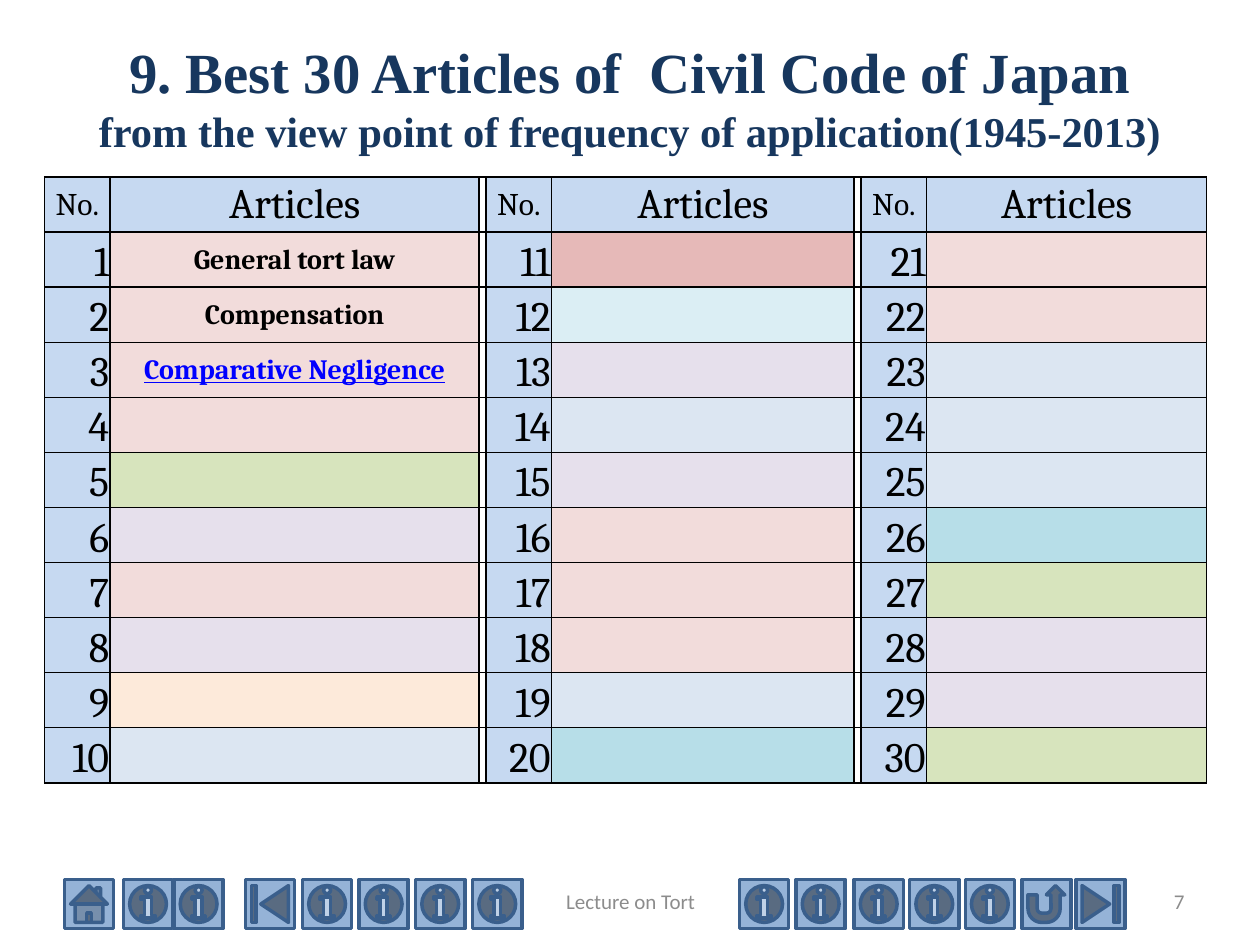
from lxml.etree import SubElement
from pptx import Presentation
from pptx.dml.color import RGBColor
from pptx.enum.shapes import MSO_SHAPE as SHAPE
from pptx.enum.text import MSO_ANCHOR as ANCHOR, MSO_AUTO_SIZE as AUTO, PP_ALIGN as ALIGN
from pptx.oxml.ns import qn
from pptx.util import Cm, Pt

HEADER = "C6D9F1"
PINK, ROSE, GREEN, LILAC = "F2DCDB", "E6B9B8", "D7E4BD", "E6E0EC"
BLUE, TEAL, PALE, PEACH = "DCE6F2", "B7DEE8", "DBEEF4", "FDEADA"

# Fill of each article cell, ten ranks per block
RANK_FILLS = [
    [PINK, PINK, PINK, PINK, GREEN, LILAC, PINK, LILAC, PEACH, BLUE],
    [ROSE, PALE, LILAC, BLUE, LILAC, PINK, PINK, PINK, BLUE, TEAL],
    [PINK, PINK, BLUE, BLUE, BLUE, TEAL, GREEN, LILAC, LILAC, GREEN],
]
ARTICLES = {1: "General tort law", 2: "Compensation", 3: "Comparative Negligence"}
COL_WIDTHS = [1.32, 7.44, 0.14, 1.32, 6.1, 0.14, 1.32, 5.64]
ROW_HEIGHT = 1.11

# Navigation buttons: kind and left edge in cm
INFO = SHAPE.ACTION_BUTTON_INFORMATION
BUTTONS = [
    (SHAPE.ACTION_BUTTON_HOME, 1.3), (INFO, 2.49), (INFO, 3.51),
    (SHAPE.ACTION_BUTTON_BEGINNING, 4.95),
    (INFO, 6.1), (INFO, 7.24), (INFO, 8.38), (INFO, 9.53),
    (INFO, 14.91), (INFO, 16.05), (INFO, 17.22), (INFO, 18.34), (INFO, 19.46),
    (SHAPE.ACTION_BUTTON_RETURN, 20.6), (SHAPE.ACTION_BUTTON_END, 21.69),
]


def rgb(value):
    return RGBColor.from_string(value)


def set_attrs(obj, values):
    for name, value in values.items():
        setattr(obj, name, value)


def add_run(p, text, size, font, color="000000", **extra):
    r = p.add_run()
    r.text = text
    set_attrs(r.font, {"size": Pt(size), "name": font, **extra})
    r.font.color.rgb = rgb(color)


def add_title(s):
    title = s.shapes.title
    set_attrs(title, {"left": Cm(1.27), "top": Cm(0.76), "width": Cm(22.86), "height": Cm(2.36)})
    tf = title.text_frame
    set_attrs(tf, {"auto_size": AUTO.NONE, "word_wrap": True, "vertical_anchor": ANCHOR.MIDDLE,
                   "margin_top": 0, "margin_bottom": 0})
    p = tf.paragraphs[0]
    p.alignment = ALIGN.CENTER
    style = {"font": "Times New Roman", "color": "17375E", "bold": True}
    add_run(p, "9. Best 30 Articles of  Civil Code of Japan", 32.4, **style)
    p.add_line_break()
    add_run(p, "from the view point of frequency of application(1945-2013)", 24.3, **style)


def add_button(s, kind, left):
    sp = s.shapes.add_shape(kind, Cm(left), Cm(17.73), Cm(0.99), Cm(0.99))
    sp.shadow.inherit = False
    sp.fill.solid()
    sp.fill.fore_color.rgb = rgb("95B3D7")
    sp.line.color.rgb = rgb("3A5F8C")
    sp.line.width = Pt(2)


def add_footer(s, text, left, width, align):
    tf = s.shapes.add_textbox(Cm(left), Cm(17.65), Cm(width), Cm(1.02)).text_frame
    set_attrs(tf, {"word_wrap": True, "vertical_anchor": ANCHOR.MIDDLE})
    p = tf.paragraphs[0]
    p.alignment = align
    add_run(p, text, 12, "Calibri", "8C8C8C")


def set_borders(cell):
    tc_pr = cell._tc.get_or_add_tcPr()
    for i, side in enumerate(("lnL", "lnR", "lnT", "lnB")):
        ln = SubElement(tc_pr, qn(f"a:{side}"), w=str(Pt(1)))
        SubElement(SubElement(ln, qn("a:solidFill")), qn("a:srgbClr"), val="000000")
        tc_pr.insert(i, ln)


def format_cell(cell, fill=None, text="", size=24, align=ALIGN.CENTER,
                anchor=ANCHOR.MIDDLE, **font):
    set_attrs(cell, {"margin_left": Cm(0.02), "margin_right": Cm(0.02), "margin_top": Cm(0.02),
                     "margin_bottom": 0, "vertical_anchor": anchor})
    if fill:
        cell.fill.solid()
        cell.fill.fore_color.rgb = rgb(fill)
    else:
        cell.fill.background()
    p = cell.text_frame.paragraphs[0]
    p.alignment = align
    if text:
        add_run(p, text, size, "Cambria", **font)
    set_borders(cell)


def add_article_table(s):
    rows = len(RANK_FILLS[0]) + 1
    frame = s.shapes.add_table(rows, len(COL_WIDTHS), Cm(0.9), Cm(3.57),
                               Cm(sum(COL_WIDTHS)), Cm(rows * ROW_HEIGHT))
    table = frame.table
    set_attrs(table, {"first_row": False, "horz_banding": False})
    for col, width in zip(table.columns, COL_WIDTHS):
        col.width = Cm(width)
    for row in table.rows:
        row.height = Cm(ROW_HEIGHT)

    for block, fills in enumerate(RANK_FILLS):
        col = 3 * block
        format_cell(table.cell(0, col), HEADER, "No.", 18)
        format_cell(table.cell(0, col + 1), HEADER, "Articles")
        for row, fill in enumerate(fills, 1):
            rank = 10 * block + row
            format_cell(table.cell(row, col), HEADER, str(rank),
                        align=ALIGN.RIGHT, anchor=ANCHOR.BOTTOM)
            link_look = {"color": "0000FF", "underline": True} if rank == 3 else {}
            format_cell(table.cell(row, col + 1), fill, ARTICLES.get(rank, ""), 16,
                        bold=True, **link_look)

    # Narrow gaps between the blocks
    for col in (2, 5):
        for row in range(rows):
            format_cell(table.cell(row, col))


def main():
    prs = Presentation()
    set_attrs(prs, {"slide_width": Cm(25.4), "slide_height": Cm(19.05)})
    s = prs.slides.add_slide(prs.slide_layouts[5])
    for kind, left in BUTTONS:
        add_button(s, kind, left)
    add_title(s)
    add_article_table(s)
    add_footer(s, "Lecture on Tort", 8.69, 8.05, ALIGN.CENTER)
    add_footer(s, "7", 18.21, 5.92, ALIGN.RIGHT)
    prs.save("out.pptx")


if __name__ == "__main__":
    main()
